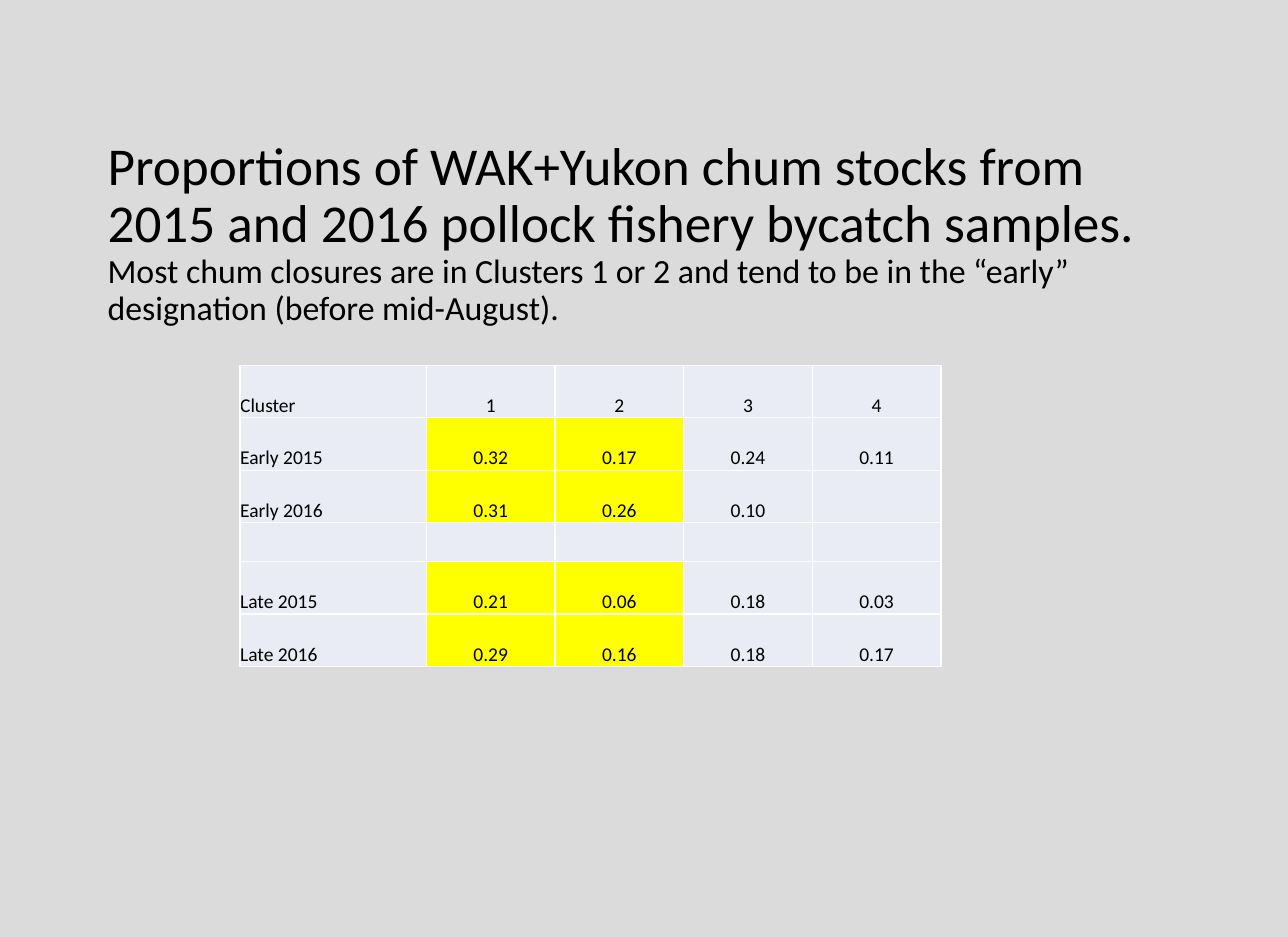
from copy import deepcopy

from lxml import etree
from pptx import Presentation
from pptx.dml.color import RGBColor
from pptx.enum.text import MSO_ANCHOR, MSO_AUTO_SIZE, PP_ALIGN
from pptx.oxml import parse_xml
from pptx.util import Cm, Pt

LEFT, CENTER = PP_ALIGN.LEFT, PP_ALIGN.CENTER
MIDDLE, BOTTOM = MSO_ANCHOR.MIDDLE, MSO_ANCHOR.BOTTOM
FIXED_SIZE = MSO_AUTO_SIZE.NONE

GREY = RGBColor(0xDB, 0xDB, 0xDB)
BLACK = RGBColor(0x00, 0x00, 0x00)
PALE_BLUE = RGBColor(0xE9, 0xEB, 0xF5)
YELLOW = RGBColor(0xFF, 0xFF, 0x00)
WHITE = RGBColor(0xFF, 0xFF, 0xFF)

FONT = "Calibri"
DRAWING_NS = "http://schemas.openxmlformats.org/drawingml/2006/main"

PROPORTIONS = [
    ["Cluster", "1", "2", "3", "4"],
    ["Early 2015", "0.32", "0.17", "0.24", "0.11"],
    ["Early 2016", "0.31", "0.26", "0.10", ""],
    ["", "", "", "", ""],
    ["Late 2015", "0.21", "0.06", "0.18", "0.03"],
    ["Late 2016", "0.29", "0.16", "0.18", "0.17"],
]
HIGHLIGHTED_CLUSTERS = (1, 2)


def add_borders(cell, color, width):
    properties = cell._tc.get_or_add_tcPr()
    for side in ("lnL", "lnR", "lnT", "lnB"):
        properties.append(parse_xml(
            f'<a:{side} xmlns:a="{DRAWING_NS}" w="{width}"><a:solidFill>'
            f'<a:srgbClr val="{color}"/></a:solidFill></a:{side}>'))


deck = Presentation()
deck.slide_width, deck.slide_height = Cm(27.94), Cm(20.32)
page = deck.slides.add_slide(deck.slide_layouts.get_by_name("Title Only"))
page.background.fill.solid()
page.background.fill.fore_color.rgb = GREY

# Title with a smaller second part
title = page.shapes.title
title.left, title.top, title.width, title.height = Cm(2.08), Cm(2.67), Cm(24.1), Cm(4.78)
frame = title.text_frame
frame.word_wrap = True
frame.auto_size = FIXED_SIZE
frame.vertical_anchor = MIDDLE
para = frame.paragraphs[0]
para.alignment = LEFT
para.line_spacing = 0.9

heading = para.add_run()
heading.text = "Proportions of WAK+Yukon chum stocks from 2015 and 2016 pollock fishery bycatch samples."
para.add_line_break()
remark = para.add_run()
remark.text = ("Most chum closures are in Clusters 1 or 2 and tend to be in the “early” "
               "designation (before mid-August).")
for span, size in ((heading, 32.7), (remark, 20.8)):
    span.font.name = FONT
    span.font.size = Pt(size)
    span.font.color.rgb = BLACK

# The line break takes the heading's size, so the first lines keep their height
line_break = para._p.find(etree.QName(DRAWING_NS, "br"))
line_break.append(deepcopy(heading._r.get_or_add_rPr()))

# Table of proportions
table = page.shapes.add_table(len(PROPORTIONS), len(PROPORTIONS[0]),
                              Cm(5.21), Cm(7.92), Cm(15.2), Cm(6.54)).table
table.first_row = False
table.horz_banding = False
for index, column in enumerate(table.columns):
    column.width = Cm(2.79) if index else Cm(4.04)

for row_index, values in enumerate(PROPORTIONS):
    table.rows[row_index].height = Cm(1.14) if any(values) else Cm(0.84)
    for column_index, value in enumerate(values):
        cell = table.cell(row_index, column_index)
        cell.margin_left = cell.margin_right = cell.margin_top = cell.margin_bottom = 0
        cell.vertical_anchor = BOTTOM
        add_borders(cell, WHITE, Pt(1))
        highlighted = row_index > 0 and value and column_index in HIGHLIGHTED_CLUSTERS
        cell.fill.solid()
        cell.fill.fore_color.rgb = YELLOW if highlighted else PALE_BLUE

        cell.text = value
        para = cell.text_frame.paragraphs[0]
        para.alignment = CENTER if column_index else LEFT
        para.font.name = FONT
        para.font.size = Pt(12)
        para.font.color.rgb = BLACK

deck.save("out.pptx")
